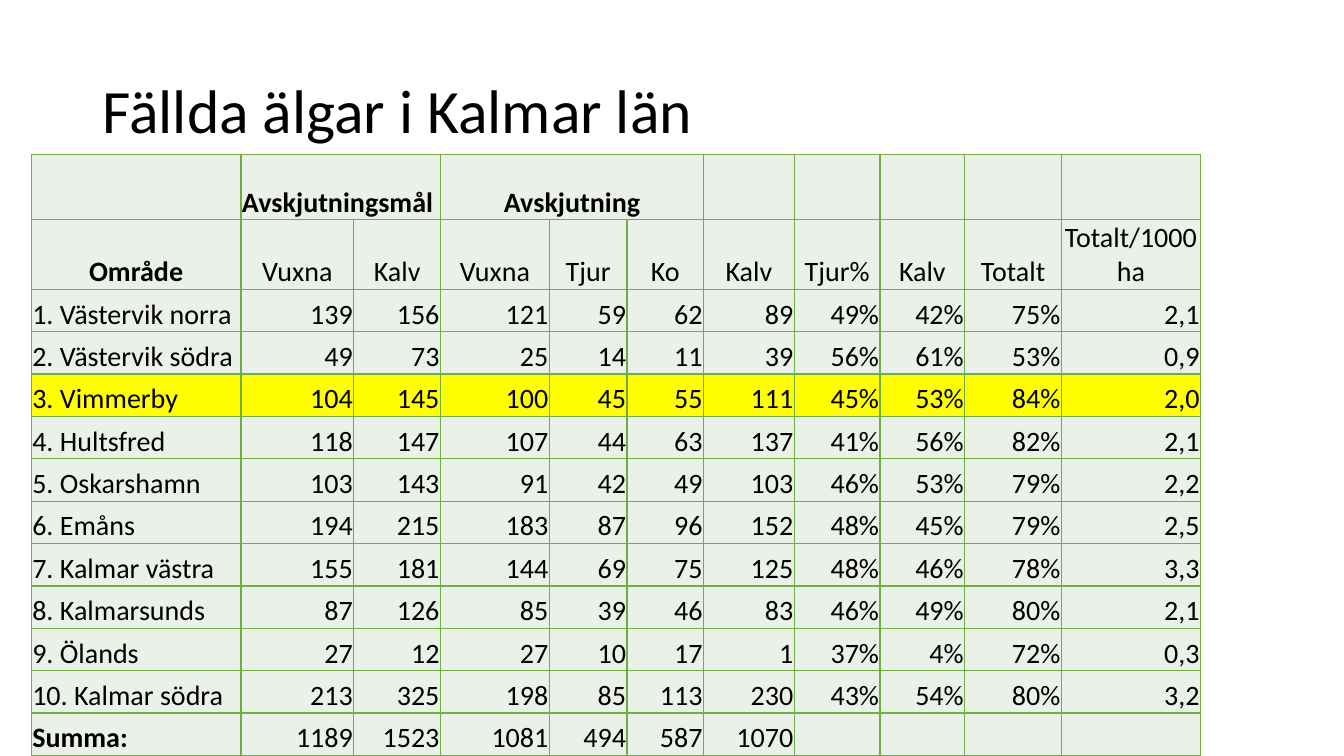
from dataclasses import dataclass

from lxml import etree
from pptx import Presentation
from pptx.dml.color import RGBColor
from pptx.enum.text import MSO_ANCHOR, PP_ALIGN
from pptx.oxml.ns import qn
from pptx.table import Table, _Cell
from pptx.text.text import _Paragraph
from pptx.util import Inches, Pt

LEFT, MID, RIGHT = PP_ALIGN.LEFT, PP_ALIGN.CENTER, PP_ALIGN.RIGHT
LOW, CENTRE = MSO_ANCHOR.BOTTOM, MSO_ANCHOR.MIDDLE

WIDE, HIGH = Inches(13.33), Inches(7.5)
FONT = "Calibri"
HUES = {"ink": "000000", "line": "70AD47", "pale": "EBF1E9", "mark": "FFFF00"}

# Percent of the slide's width and height
COLS = [15.6, 8.4, 6.45, 8.1, 5.78, 5.7, 6.75, 6.38, 6.3, 7.2, 10.35]
TOP_ROW, HEAD_ROW, BODY_ROW = 8.67, 9.2, 5.61


@dataclass
class Row:
    texts: str
    high: float = BODY_ROW
    fill: str = "pale"
    align: PP_ALIGN = RIGHT
    first: PP_ALIGN = LEFT
    bold: int = 0  # number of leading cells in bold
    top: float = 1
    base: float = 1


ROWS = [
    Row("|Avskjutningsmål||Avskjutning|||||||", TOP_ROW, align=MID, bold=len(COLS)),
    Row("Område|Vuxna|Kalv|Vuxna|Tjur|Ko|Kalv|Tjur%|Kalv|Totalt|Totalt/1000 ha",
        HEAD_ROW, align=MID, first=MID, bold=1),
    Row("1. Västervik norra|139|156|121|59|62|89|49%|42%|75%|2,1"),
    Row("2. Västervik södra|49|73|25|14|11|39|56%|61%|53%|0,9"),
    Row("3. Vimmerby|104|145|100|45|55|111|45%|53%|84%|2,0", fill="mark"),
    Row("4. Hultsfred|118|147|107|44|63|137|41%|56%|82%|2,1"),
    Row("5. Oskarshamn|103|143|91|42|49|103|46%|53%|79%|2,2"),
    Row("6. Emåns|194|215|183|87|96|152|48%|45%|79%|2,5"),
    Row("7. Kalmar västra|155|181|144|69|75|125|48%|46%|78%|3,3"),
    Row("8. Kalmarsunds|87|126|85|39|46|83|46%|49%|80%|2,1"),
    Row("9. Ölands|27|12|27|10|17|1|37%|4%|72%|0,3"),
    Row("10. Kalmar södra|213|325|198|85|113|230|43%|54%|80%|3,2", base=2),
    Row("Summa:|1189|1523|1081|494|587|1070||||", bold=1, top=2),
]


def across(share: float) -> int:
    return round(WIDE * share / 100)


def down(share: float) -> int:
    return round(HIGH * share / 100)


def hue(name: str) -> RGBColor:
    return RGBColor.from_string(HUES[name])


def write(para: _Paragraph, text: str, size: float, bold: bool = False) -> None:
    run = para.add_run()
    run.text = text
    font = run.font
    font.name, font.size, font.bold = FONT, Pt(size), bold
    font.color.rgb = hue("ink")


def edge(cell: _Cell, top: float, base: float) -> None:
    """Draw the four borders; call before setting the cell's fill."""
    props = cell._tc.get_or_add_tcPr()
    for tag, width in (("a:lnL", 1), ("a:lnR", 1), ("a:lnT", top), ("a:lnB", base)):
        line = etree.SubElement(props, qn(tag), w=str(Pt(width)))
        fill = etree.SubElement(line, qn("a:solidFill"))
        etree.SubElement(fill, qn("a:srgbClr"), val=HUES["line"])


def fill_row(table: Table, index: int, row: Row) -> None:
    table.rows[index].height = down(row.high)
    for col, text in enumerate(row.texts.split("|")):
        cell = table.cell(index, col)
        edge(cell, row.top, row.base)
        cell.fill.solid()
        cell.fill.fore_color.rgb = hue(row.fill)
        cell.vertical_anchor = LOW
        cell.margin_left = cell.margin_right = cell.margin_top = Inches(0.01)
        cell.margin_bottom = 0
        if text:
            para = cell.text_frame.paragraphs[0]
            para.alignment = row.first if col == 0 else row.align
            write(para, text, 20, col < row.bold)


def add_title(slide) -> None:
    box = slide.shapes.add_textbox(across(6.9), down(5.33), across(86.27), down(19.33))
    frame = box.text_frame
    frame.word_wrap = True
    frame.vertical_anchor = CENTRE
    para = frame.paragraphs[0]
    para.line_spacing = 0.9
    write(para, "Fällda älgar i Kalmar län", 44)


def add_grid(slide) -> None:
    high = sum(row.high for row in ROWS)
    table = slide.shapes.add_table(
        len(ROWS), len(COLS), across(2.33), down(20.4), across(sum(COLS)), down(high)
    ).table
    table.first_row = table.horz_banding = False
    for col, share in zip(table.columns, COLS):
        col.width = across(share)
    for index, row in enumerate(ROWS):
        fill_row(table, index, row)
    for start, end in ((1, 2), (3, 5)):
        table.cell(0, start).merge(table.cell(0, end))
    table.cell(0, 1).text_frame.paragraphs[0].alignment = LEFT


def main() -> None:
    deck = Presentation()
    deck.slide_width, deck.slide_height = WIDE, HIGH
    slide = deck.slides.add_slide(deck.slide_layouts[6])
    add_title(slide)
    add_grid(slide)
    deck.save("out.pptx")


if __name__ == "__main__":
    main()
